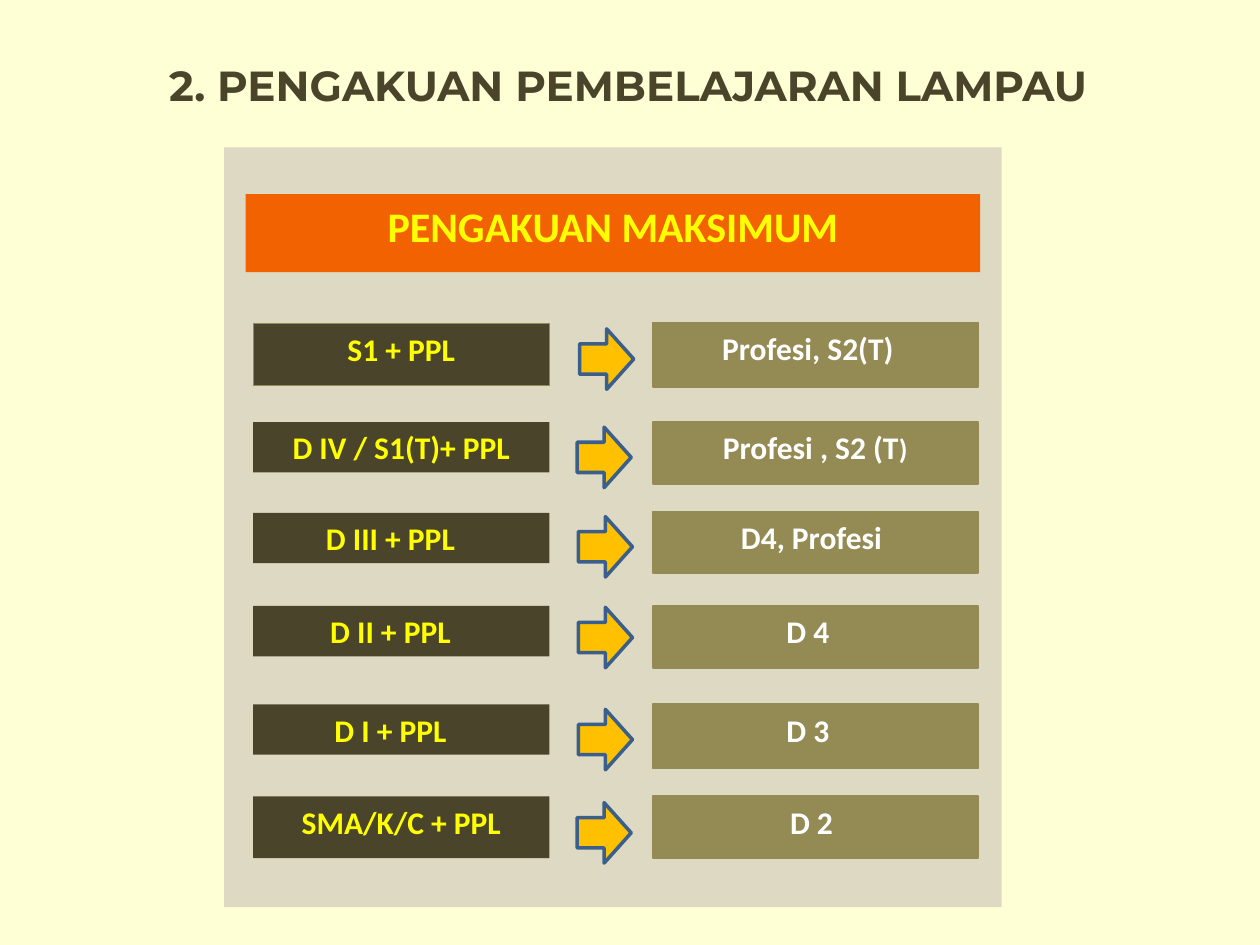
from dataclasses import dataclass

from pptx import Presentation
from pptx.dml.color import RGBColor
from pptx.enum.shapes import MSO_SHAPE
from pptx.enum.text import MSO_ANCHOR, PP_ALIGN
from pptx.util import Inches, Pt

RECT = MSO_SHAPE.RECTANGLE
ARROW = MSO_SHAPE.RIGHT_ARROW
TOP = MSO_ANCHOR.TOP
CENTER = PP_ALIGN.CENTER


@dataclass(frozen=True)
class Theme:
    """Hold the colours, fonts and type sizes."""
    page: str = "FFFFD6"
    dark: str = "4A452A"
    panel: str = "DDD9C3"
    orange: str = "F26200"
    yellow: str = "FFFF00"
    olive: str = "948A54"
    white: str = "FFFFFF"
    gold: str = "FFC000"
    blue: str = "3A5F8C"
    head: str = "Montserrat"
    body: str = "Calibri"
    large: int = 24
    mid: int = 18
    small: int = 16


THEME = Theme()
SPACE = 0.057

# top, height and text inset of the source, arrow place, height and text inset of the award
ROWS = [
    (2.57, 0.49, 0, (4.6, 2.61), 2.56, 0.51, 2, "S1 + PPL", ["Profesi, S2(T)"]),
    (3.35, 0.4, 0, (4.58, 3.39), 3.35, 0.49, 0, "D IV / S1(T)+ PPL", ["Profesi , S2 (T", ")"]),
    (4.07, 0.4, 3, (4.59, 4.1), 4.06, 0.49, 1, "D III + PPL", ["D4, Profesi"]),
    (4.81, 0.4, 3, (4.59, 4.82), 4.81, 0.49, 2, "D II + PPL", ["D 4"]),
    (5.59, 0.4, 3, (4.59, 5.63), 5.59, 0.51, 2, "D I + PPL", ["D 3"]),
    (6.32, 0.49, 0, (4.58, 6.37), 6.32, 0.49, 1, "SMA/K/C + PPL", ["D 2"]),
]


def rgb(code):
    """Turn a hex code into a colour."""
    return RGBColor.from_string(code)


def write(shape, parts, face, color, sizes, pad=0):
    """Write centred bold runs at the top of a shape."""
    frame = shape.text_frame
    form = {"word_wrap": True, "vertical_anchor": TOP,
            "margin_left": Inches(0.1), "margin_right": Inches(0.1 + pad * SPACE),
            "margin_top": Inches(0.05), "margin_bottom": Inches(0.05)}
    for key, value in form.items():
        setattr(frame, key, value)
    para = frame.paragraphs[0]
    para.alignment = CENTER
    for text, size in zip(parts, sizes):
        run = para.add_run()
        run.text = text
        for key, value in {"name": face, "size": Pt(size), "bold": True}.items():
            setattr(run.font, key, value)
        run.font.color.rgb = rgb(color)


def block(slide, kind, box, fill, line=None, width=1):
    """Add a filled shape with an optional outline."""
    shape = slide.shapes.add_shape(kind, *map(Inches, box))
    shape.shadow.inherit = False
    shape.fill.solid()
    shape.fill.fore_color.rgb = rgb(fill)
    if line:
        shape.line.color.rgb = rgb(line)
        shape.line.width = Pt(width)
    else:
        shape.line.fill.background()
    return shape


def title(slide, box):
    """Place and format the slide title."""
    shape = slide.shapes.title
    for key, value in zip(("left", "top", "width", "height"), box):
        setattr(shape, key, Inches(value))
    write(shape, ["2. PENGAKUAN PEMBELAJARAN LAMPAU"], THEME.head, THEME.dark, [THEME.large])


def panel(slide, box):
    """Draw the panel with its banner and its rows."""
    left, top, width, _ = box
    block(slide, RECT, box, THEME.panel)
    banner = block(slide, RECT, (left + 0.17, top + 0.37, width - 0.34, 0.62), THEME.orange)
    write(banner, ["PENGAKUAN MAKSIMUM"], THEME.body, THEME.yellow, [THEME.large])
    sizes = [THEME.mid, THEME.small]
    for index, (y, tall, pad, tip, high, deep, gap, name, award) in enumerate(ROWS):
        edge = THEME.olive if index == 0 else None
        start = block(slide, RECT, (left + 0.23, y, 2.35, tall), THEME.dark, edge, 0.75)
        write(start, [name], THEME.body, THEME.yellow, sizes, pad)
        block(slide, ARROW, (*tip, 0.43, 0.48), THEME.gold, THEME.blue, 2)
        goal = block(slide, RECT, (left + 3.4, high, 2.58, deep), THEME.olive, THEME.olive)
        write(goal, award, THEME.body, THEME.white, sizes, gap)


def main():
    """Build and save the slide."""
    deck = Presentation()
    deck.slide_width, deck.slide_height = Inches(10), Inches(7.5)
    slide = deck.slides.add_slide(deck.slide_layouts[5])
    slide.background.fill.solid()
    slide.background.fill.fore_color.rgb = rgb(THEME.page)
    title(slide, (0.36, 0.42, 9.25, 0.5))
    panel(slide, (1.78, 1.17, 6.17, 6.03))
    deck.save("out.pptx")


if __name__ == "__main__":
    main()
